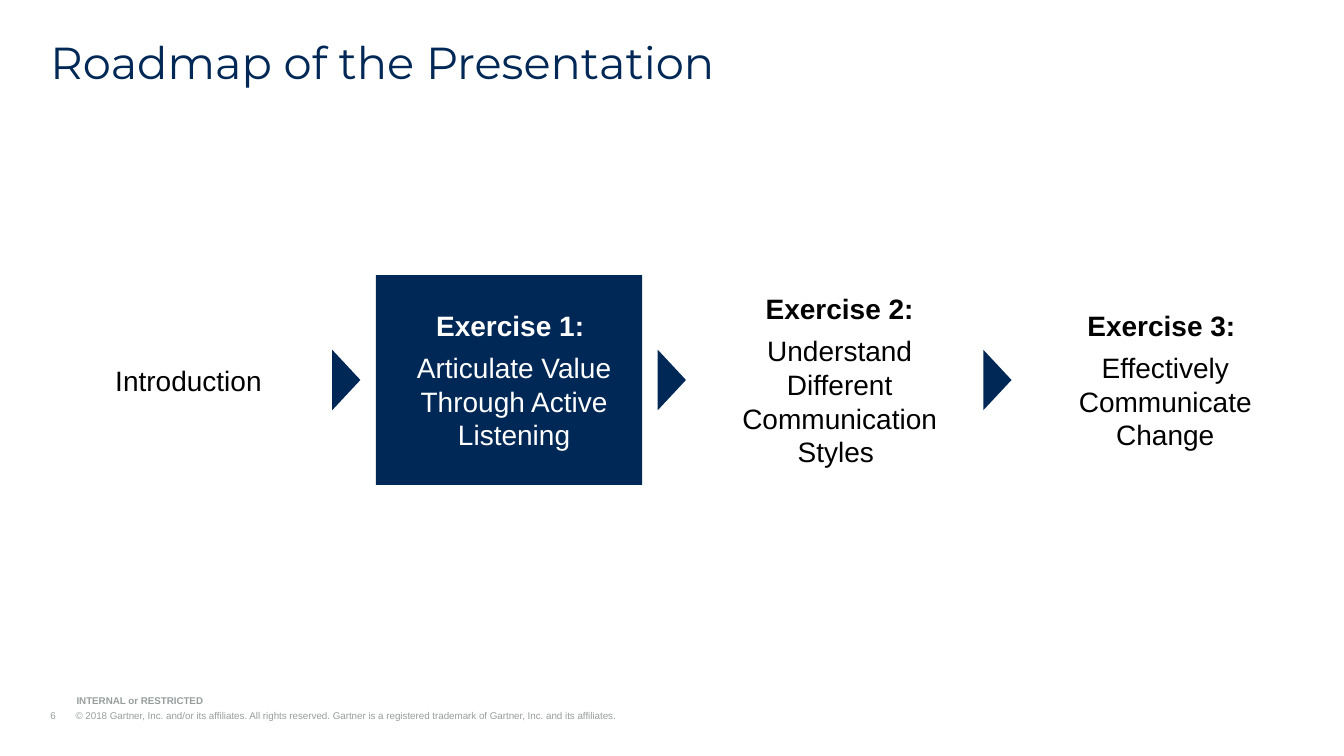
from lxml.etree import SubElement
from pptx import Presentation
from pptx.dml.color import RGBColor
from pptx.enum.shapes import MSO_SHAPE
from pptx.enum.text import MSO_ANCHOR, PP_ALIGN
from pptx.oxml.ns import qn
from pptx.util import Pt

NAVY, GREY, BLACK, WHITE = "002856", "979D9D", "000000", "FFFFFF"


def rgb(value):
    return RGBColor.from_string(value)


class SlideBuilder:
    """Holds the slide and its text style."""

    body_font = "Arial"
    title_font = "Montserrat"

    def __init__(self, slide):
        self.shapes = slide.shapes

    def shape(self, kind, x, y, w, h, fill):
        s = self.shapes.add_shape(kind, Pt(x), Pt(y), Pt(w), Pt(h))
        s.shadow.inherit = False
        s.fill.solid()
        s.fill.fore_color.rgb = rgb(fill)
        s.line.fill.background()
        return s

    def textbox(self, x, y, w, h):
        return self.shapes.add_textbox(Pt(x), Pt(y), Pt(w), Pt(h))

    def frame(self, s, text, anchor, margins=(0, 0, 0, 0)):
        tf = s.text_frame
        tf.word_wrap = True
        tf.vertical_anchor = anchor
        tf.margin_left, tf.margin_top, tf.margin_right, tf.margin_bottom = map(Pt, margins)
        tf.text = text
        return tf

    def style(self, p, size, color, bold=False, font=body_font):
        for r in p.runs:
            r.font.name = font
            r.font.size = Pt(size)
            r.font.bold = bold
            r.font.color.rgb = rgb(color)

    def title(self, text):
        sp = self.textbox(36, 28.8, 888, 34.56)
        p = self.frame(sp, text, MSO_ANCHOR.TOP).paragraphs[0]
        p.line_spacing = 0.9
        self.style(p, 32, NAVY, font=self.title_font)

    def footer(self, text, x, y, w, bold=False):
        p = self.frame(self.textbox(x, y, w, 8.64), text, MSO_ANCHOR.BOTTOM).paragraphs[0]
        # Hanging indent with a tab stop after the page number
        pPr = p._p.get_or_add_pPr()
        pPr.set("marL", str(Pt(18)))
        pPr.set("indent", str(-Pt(18)))
        tabs = SubElement(pPr, qn("a:tabLst"))
        SubElement(tabs, qn("a:tab"), pos=str(Pt(18)), algn="l")
        self.style(p, 7, GREY, bold)

    def step(self, lines, x, y, w, h, active):
        if active:
            sp = self.shape(MSO_SHAPE.RECTANGLE, x, y, w, h, NAVY)
        else:
            sp = self.textbox(x, y, w, h)
        tf = self.frame(sp, "\n".join(lines), MSO_ANCHOR.MIDDLE, (14.4, 14.4, 7.2, 14.4))
        for i, p in enumerate(tf.paragraphs):
            heading = i < len(lines) - 1
            p.alignment = PP_ALIGN.CENTER
            p.space_after = Pt(6 if heading else 12)
            self.style(p, 20, WHITE if active else BLACK, heading)

    def arrow(self, center_x, center_y, length=20.16, breadth=43.2):
        s = self.shape(MSO_SHAPE.ISOSCELES_TRIANGLE, center_x - breadth / 2,
                       center_y - length / 2, breadth, length, NAVY)
        s.rotation = 90


STEPS = [
    ["Introduction"],
    ["Exercise 1: ", "Articulate Value Through Active Listening"],
    ["Exercise 2:", "Understand Different Communication Styles "],
    ["Exercise 3: ", "Effectively Communicate Change"],
]
ACTIVE_STEP = 1
LEFT, TOP, WIDTH, HEIGHT, PITCH = 36, 196.56, 190.08, 149.76, 232.56


def main():
    prs = Presentation()
    prs.slide_width, prs.slide_height = Pt(960), Pt(540)
    roadmap = SlideBuilder(prs.slides.add_slide(prs.slide_layouts[6]))

    # Footer
    roadmap.footer("6\t© 2018 Gartner, Inc. and/or its affiliates. All rights reserved. Gartner is "
                   "a registered trademark of Gartner, Inc. and its affiliates.", 36, 506.88, 575.28)
    roadmap.footer("INTERNAL or RESTRICTED", 54.72, 496.08, 182.16, bold=True)

    # Title
    roadmap.title("Roadmap of the Presentation")

    # Steps, with an arrow in the middle of each gap
    for i, lines in enumerate(STEPS):
        x = LEFT + i * PITCH
        roadmap.step(lines, x, TOP, WIDTH, HEIGHT, i == ACTIVE_STEP)
        if i:
            roadmap.arrow(x - (PITCH - WIDTH) / 2, TOP + HEIGHT / 2)

    prs.save("out.pptx")


if __name__ == "__main__":
    main()
